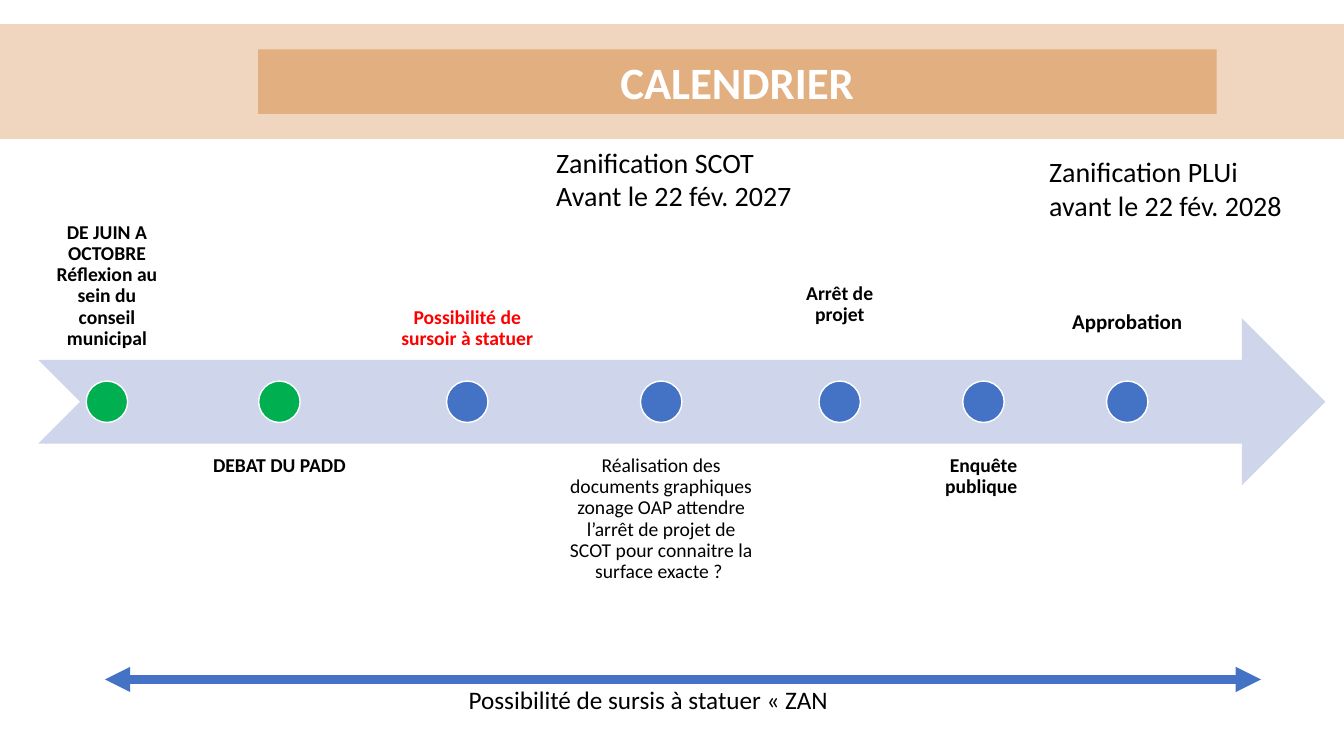
"""Build the CALENDRIER timeline slide."""
from dataclasses import dataclass

import lxml.etree
import pptx
import pptx.dml.color
import pptx.enum.shapes
import pptx.enum.text
import pptx.oxml.ns
import pptx.util

Pt = pptx.util.Pt
SHAPE = pptx.enum.shapes.MSO_SHAPE
ALIGN = pptx.enum.text.PP_ALIGN
ANCHOR = pptx.enum.text.MSO_ANCHOR
qn = pptx.oxml.ns.qn


@dataclass(frozen=True)
class Theme:
    """Colours, font and type sizes."""
    font: str = "Calibri"
    band: str = "E2AF81"
    arrow: str = "CFD5EA"
    blue: str = "4472C4"
    green: str = "00B050"
    red: str = "FF0000"
    black: str = "000000"
    white: str = "FFFFFF"
    title: int = 32
    deadline: int = 20
    note: int = 18
    step: int = 14
    final: int = 15


T = Theme()
AXIS_Y, DOT, GAP = 287, 29.6, 4.7
LABEL_H, UP_Y, DOWN_Y = 119.5, 138.2, 317.5
STEPS = [
    dict(text="DE JUIN A OCTOBRE Réflexion au sein du conseil municipal", w=98, dot=T.green),
    dict(text="DEBAT DU PADD", w=139, dot=T.green),
    dict(text="Possibilité de sursoir à statuer", w=120, color=T.red),
    dict(text="Réalisation des documents graphiques zonage OAP attendre l’arrêt de projet "
              "de SCOT pour connaitre la surface exacte ? ", w=147.6, bold=False),
    dict(text="Arrêt de projet", w=98, lift=20),
    dict(text="Enquête publique ", w=98),
    dict(text="Approbation", w=98, size=T.final, lift=22),
]
ABOVE = {0, 2, 4, 6}


def rgb(color):
    """Return an RGBColor from a hex string."""
    return pptx.dml.color.RGBColor.from_string(color)


def apply(obj, formats):
    """Set attributes from a dict of format values."""
    for name, value in formats.items():
        setattr(obj, name, value)


def write(tf, text, size, color=T.black, bold=False, **para):
    """Write one formatted paragraph into a text frame."""
    p = tf.paragraphs[0]
    p.text = text
    apply(p, para)
    for r in p.runs:
        apply(r.font, dict(name=T.font, size=Pt(size), bold=bold))
        r.font.color.rgb = rgb(color)


def add_block(s, kind, box, fill, line=None, alpha=None):
    """Add a filled preset shape without shadow."""
    sp = s.shapes.add_shape(kind, *map(Pt, box))
    sp.shadow.inherit = False
    sp.fill.solid()
    sp.fill.fore_color.rgb = rgb(fill)
    if line:
        sp.line.color.rgb = rgb(line)
        sp.line.width = Pt(1)
    else:
        sp.line.fill.background()
    if alpha:
        clr = sp._element.spPr.find(".//" + qn("a:srgbClr"))
        lxml.etree.SubElement(clr, qn("a:alpha"), val=str(alpha * 1000))
    return sp


def add_text(s, box, text, size, frame=None, **style):
    """Add a text box with one paragraph."""
    tf = s.shapes.add_textbox(*map(Pt, box)).text_frame
    apply(tf, dict(word_wrap=True) | (frame or {}))
    write(tf, text, size, **style)


def add_title(s, text):
    """Draw the band and place the title on it."""
    band = add_block(s, SHAPE.RECTANGLE, (0, 17.3, 960, 82), T.band, alpha=50)
    title = s.shapes.title
    band._element.addnext(title._element)
    apply(title, dict(left=Pt(184.3), top=Pt(35.3), width=Pt(684.7), height=Pt(46.1)))
    title.fill.solid()
    title.fill.fore_color.rgb = rgb(T.band)
    apply(title.text_frame, dict(auto_size=pptx.enum.text.MSO_AUTO_SIZE.NONE,
                                 vertical_anchor=ANCHOR.MIDDLE))
    write(title.text_frame, text, T.title, T.white, True, alignment=ALIGN.CENTER)


def add_step(s, x, above, text, w, dot=T.blue, size=T.step, color=T.black, bold=True, lift=0):
    """Add a milestone label and its dot on the axis."""
    inset = Pt(8)
    frame = dict(margin_left=inset, margin_right=inset, margin_top=inset,
                 margin_bottom=Pt(8 + lift),
                 vertical_anchor=ANCHOR.BOTTOM if above else ANCHOR.TOP)
    add_text(s, (x, UP_Y if above else DOWN_Y, w, LABEL_H), text, size, frame,
             color=color, bold=bold, alignment=ALIGN.CENTER, line_spacing=0.9)
    add_block(s, SHAPE.OVAL, (x + (w - DOT) / 2, AXIS_Y - DOT / 2, DOT, DOT), dot, T.white)


def add_span(s, x1, x2, y):
    """Add a thick double-headed arrow."""
    cx = s.shapes.add_connector(pptx.enum.shapes.MSO_CONNECTOR.STRAIGHT,
                                Pt(x1), Pt(y), Pt(x2), Pt(y))
    cx.line.color.rgb = rgb(T.blue)
    cx.line.width = Pt(6)
    ln = cx.line._get_or_add_ln()
    for end in ("a:headEnd", "a:tailEnd"):
        lxml.etree.SubElement(ln, qn(end), type="triangle")
    lxml.etree.SubElement(cx._element.spPr, qn("a:effectLst"))


def main():
    """Build and save the slide."""
    prs = pptx.Presentation()
    apply(prs, dict(slide_width=Pt(960), slide_height=Pt(540)))
    s = prs.slides.add_slide(prs.slide_layouts[5])
    add_title(s, "CALENDRIER")
    add_block(s, SHAPE.NOTCHED_RIGHT_ARROW,
              (27.4, AXIS_Y - LABEL_H / 2, 919.4, LABEL_H), T.arrow)
    x = 27.4
    for i, step in enumerate(STEPS):
        add_step(s, x, i in ABOVE, **step)
        x += step["w"] + GAP
    for left, top, text in ((354.2, 100.1, "Zanification SCOT\vAvant le 22 fév. 2027"),
                            (706.3, 106.8, "Zanification PLUi\vavant le 22 fév. 2028")):
        add_text(s, (left, top, 325.4, 55.4), text, T.deadline, level=1)
    add_span(s, 75, 900.7, 485.3)
    add_text(s, (327.6, 485.3, 278, 29), "Possibilité de sursis à statuer «\u00a0ZAN", T.note,
             dict(word_wrap=False))
    prs.save("out.pptx")


if __name__ == "__main__":
    main()
